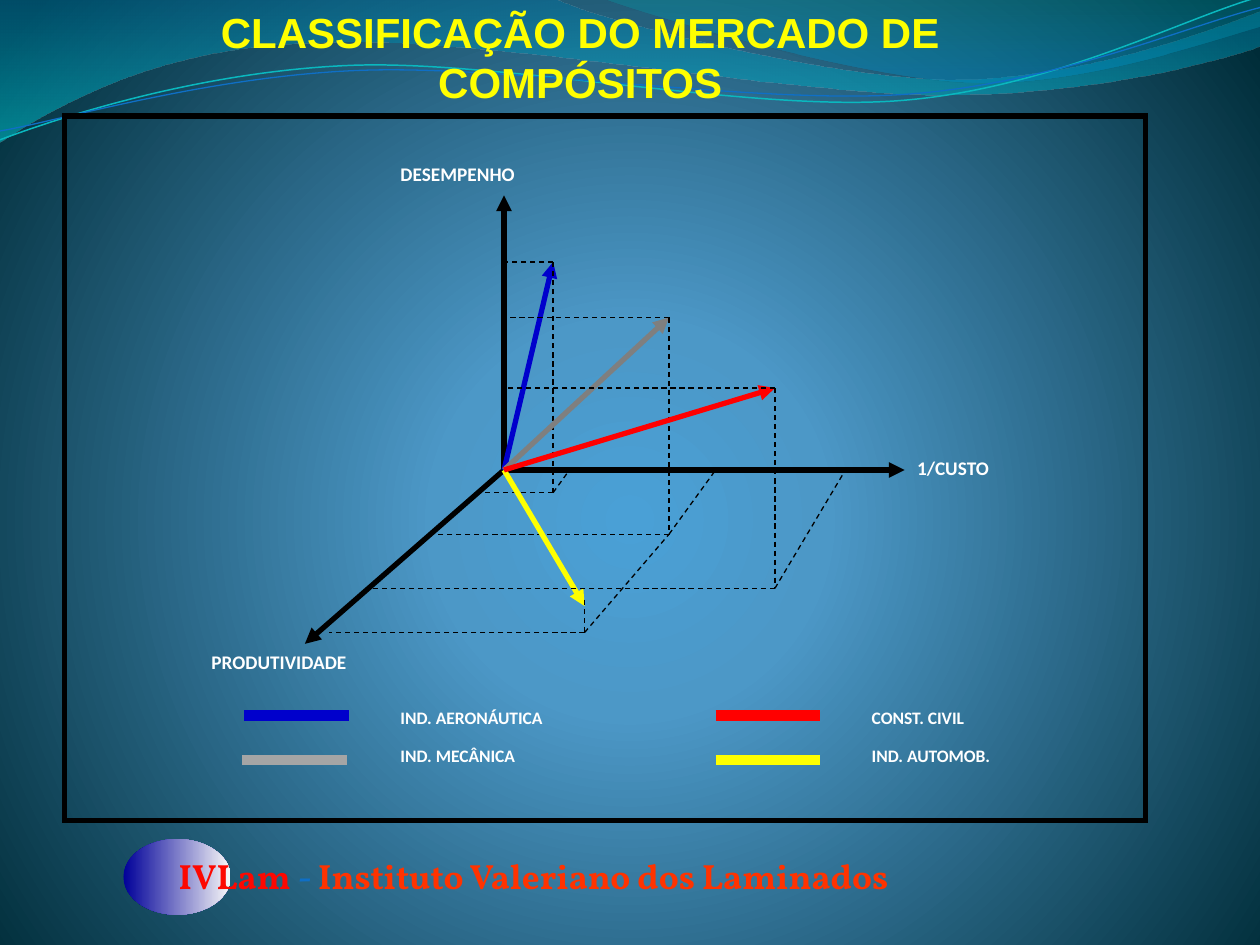
from dataclasses import dataclass

from lxml import etree
from pptx import Presentation
from pptx import util as u
from pptx.dml import color
from pptx.enum import dml, shapes, text
from pptx.oxml import ns

PX = 9144
ORIGIN = (400, 373)
Point = tuple[int, int]
C = {
    "black": "000000", "white": "FFFFFF", "yellow": "FFFF00", "red": "FF0000",
    "blue": "0000CC", "gray": "7F7F7F", "silver": "A5A5A5", "navy": "000099",
    "pale": "F8F8F8", "crimson": "FD0801", "orange": "FF3300", "azure": "0F6FC6",
    "aqua": "0AB8BF", "sky": "4AA0D6", "steel": "4C98C7", "deep": "002C38",
    "ocean": "0074A1", "teal": "00C6CF", "sea": "00A1A9", "lagoon": "008BBF",
}


@dataclass
class Stop:
    pos: int
    color: str
    alpha: int = 100


@dataclass
class Run:
    text: str
    color: str


@dataclass
class Label:
    box: tuple[int, int, int, int]
    lines: list[str]
    size: int


@dataclass
class Sector:
    color: str
    tip: Point
    drop_top: int
    foot: Point
    left: int
    back: Point
    wall: bool = True


@dataclass
class Key:
    color: str
    start: Point


@dataclass
class Wave:
    start: Point
    segments: list[list[Point]]
    fill: list[Stop] | None = None
    line: str = ""
    width: float = 0


WAVES = [
    Wave((0, -1), [[(440, -1)], [(476, 17), (664, 63), (758, 63)],
                   [(853, 63), (958, 26), (1000, 9)], [(1001, 36)],
                   [(983, 44), (870, 76), (746, 75)], [(622, 75), (382, 28), (257, 34)],
                   [(129, 35), (46, 83), (-1, 113)]],
         [Stop(0, "ocean", 45), Stop(100, "teal", 55)]),
    Wave((479, -1), [[(509, 11), (682, 62), (769, 65)], [(856, 69), (961, 32), (1000, 21)],
                     [(1000, 0)]],
         [Stop(0, "sea", 30), Stop(80, "lagoon", 45)]),
    Wave((0, 111), [[(48, 93), (158, 57), (277, 52)], [(395, 47), (593, 89), (713, 80)],
                    [(833, 71), (938, 15), (998, -2)]], line="aqua", width=0.85),
    Wave((0, 104), [[(47, 96), (164, 61), (283, 56)], [(403, 51), (597, 83), (717, 75)],
                    [(836, 67), (941, 21), (1000, 6)]], line="azure", width=0.75),
]
AXIS_ENDS = [(400, 155), (242, 511), (718, 373)]
SECTORS = [
    Sector("blue", (439, 208), 208, (439, 391), 379, (452, 373)),
    Sector("gray", (531, 252), 252, (531, 424), 343, (568, 373)),
    Sector("yellow", (464, 481), 476, (464, 502), 261, (531, 424), wall=False),
    Sector("red", (615, 308), 308, (615, 467), 292, (671, 373)),
]
KEYS = [Key("blue", (194, 568)), Key("silver", (192, 603)),
        Key("red", (568, 568)), Key("yellow", (568, 603))]
LABELS = [
    Label((308, 124, 181, 31), ["DESEMPENHO"], 11),
    Label((718, 357, 126, 34), ["1/CUSTO"], 11),
    Label((158, 511, 199, 45), ["PRODUTIVIDADE"], 11),
    Label((308, 556, 222, 70), ["IND. AERONÁUTICA", "IND. MECÂNICA"], 10),
    Label((682, 556, 210, 70), ["CONST. CIVIL", "IND. AUTOMOB."], 10),
]


def rgb(name: str) -> color.RGBColor:
    return color.RGBColor.from_string(C[name])


def emu(*values: int) -> list[int]:
    return [v * PX for v in values]


def add_gradient(fill, element, stops: list[Stop], angle: int | None) -> None:
    fill.solid()
    solid = element.find(".//" + ns.qn("a:solidFill"))
    grad = etree.Element(ns.qn("a:gradFill"), rotWithShape="1")
    gs_list = etree.SubElement(grad, ns.qn("a:gsLst"))
    for stop in stops:
        gs = etree.SubElement(gs_list, ns.qn("a:gs"), pos=str(stop.pos * 1000))
        clr = etree.SubElement(gs, ns.qn("a:srgbClr"), val=C[stop.color])
        if stop.alpha < 100:
            etree.SubElement(clr, ns.qn("a:alpha"), val=str(stop.alpha * 1000))
    if angle is None:
        shade = etree.SubElement(grad, ns.qn("a:path"), {"path": "circle"})
        etree.SubElement(shade, ns.qn("a:fillToRect"),
                         l="10000", t="110000", r="10000", b="100000")
    else:
        etree.SubElement(grad, ns.qn("a:lin"), ang=str(angle * 60000), scaled="0")
    solid.getparent().replace(solid, grad)


def add_wave(s, wave: Wave) -> None:
    builder = s.shapes.build_freeform(*wave.start, scale=float(PX))
    for segment in wave.segments:
        builder.add_line_segments(segment, close=False)
    if wave.fill:
        builder.add_line_segments([], close=True)
    sp = builder.convert_to_shape()
    sp.shadow.inherit = False
    steps = iter(sp._element.findall(".//" + ns.qn("a:lnTo")))
    for segment in wave.segments:
        lines = [next(steps) for _ in segment]
        if len(lines) == 3:
            curve = etree.Element(ns.qn("a:cubicBezTo"))
            lines[0].addprevious(curve)
            for line in lines:
                curve.append(line[0])
                line.getparent().remove(line)
    if wave.fill:
        add_gradient(sp.fill, sp._element.spPr, wave.fill, 90)
        sp.line.fill.background()
    else:
        sp.fill.background()
        sp.line.color.rgb = rgb(wave.line)
        sp.line.width = u.Pt(wave.width)


def add_line(s, start: Point, end: Point, name: str = "black", width: float = 0.75,
             arrow: bool = False, dash: bool = False) -> None:
    sp = s.shapes.add_connector(shapes.MSO_CONNECTOR.STRAIGHT, *emu(*start, *end))
    sp.line.color.rgb = rgb(name)
    sp.line.width = u.Pt(width)
    if dash:
        sp.line.dash_style = dml.MSO_LINE.DASH
    if arrow:
        etree.SubElement(sp.line._get_or_add_ln(), ns.qn("a:tailEnd"), type="triangle")
    etree.SubElement(sp._element.spPr, ns.qn("a:effectLst"))


def add_sector(s, sector: Sector) -> None:
    x, y = sector.tip
    add_line(s, ORIGIN, sector.tip, sector.color, 3, arrow=True)
    if sector.wall:
        add_line(s, sector.tip, (ORIGIN[0], y), dash=True)
    add_line(s, (x, sector.drop_top), sector.foot, dash=True)
    add_line(s, sector.foot, (sector.left, sector.foot[1]), dash=True)
    add_line(s, sector.foot, sector.back, dash=True)


def add_text(s, box: tuple[int, int, int, int], lines: list[list[Run]], size: int,
             font: str, align=text.PP_ALIGN.LEFT, after: int = 0) -> None:
    tf = s.shapes.add_textbox(*emu(*box)).text_frame
    tf.word_wrap = True
    for i, runs in enumerate(lines):
        p = tf.add_paragraph() if i else tf.paragraphs[0]
        p.alignment = align
        p.space_after = u.Pt(after)
        for run in runs:
            r = p.add_run()
            r.text = run.text
            r.font.name = font
            r.font.size = u.Pt(size)
            r.font.bold = True
            r.font.color.rgb = rgb(run.color)


def main() -> None:
    prs = Presentation()
    prs.slide_width, prs.slide_height = emu(1000, 750)
    s = prs.slides.add_slide(prs.slide_layouts[6])
    add_gradient(s.background.fill, s._element,
                 [Stop(0, "sky"), Stop(25, "steel"), Stop(100, "deep")], None)
    for wave in WAVES:
        add_wave(s, wave)

    emblem = s.shapes.add_shape(shapes.MSO_SHAPE.OVAL, *emu(98, 666, 85, 60))
    emblem.shadow.inherit = False
    add_gradient(emblem.fill, emblem._element.spPr, [Stop(0, "navy"), Stop(100, "pale")], 0)
    emblem.line.fill.background()
    add_text(s, (132, 673, 658, 43),
             [[Run("IVLam ", "crimson"), Run("- ", "azure"),
               Run("Instituto Valeriano dos Laminados", "orange")]], 20, "Vollkorn")
    add_text(s, (67, 0, 787, 91), [[Run("CLASSIFICAÇÃO DO MERCADO DE COMPÓSITOS", "yellow")]],
             24, "Arial", text.PP_ALIGN.CENTER)

    for end in AXIS_ENDS:
        add_line(s, ORIGIN, end, width=3, arrow=True)
    for sector in SECTORS:
        add_sector(s, sector)
    for key in KEYS:
        add_line(s, key.start, (key.start[0] + 83, key.start[1]), key.color, 6)
    for label in LABELS:
        add_text(s, label.box, [[Run(line, "white")] for line in label.lines],
                 label.size, "Calibri", after=10)

    frame = s.shapes.add_shape(shapes.MSO_SHAPE.RECTANGLE, *emu(51, 92, 858, 559))
    frame.shadow.inherit = False
    frame.fill.background()
    frame.line.color.rgb = rgb("black")
    frame.line.width = u.Pt(3)
    etree.SubElement(frame.line._get_or_add_ln(), ns.qn("a:miter"), lim="800000")
    prs.save("out.pptx")


if __name__ == "__main__":
    main()
